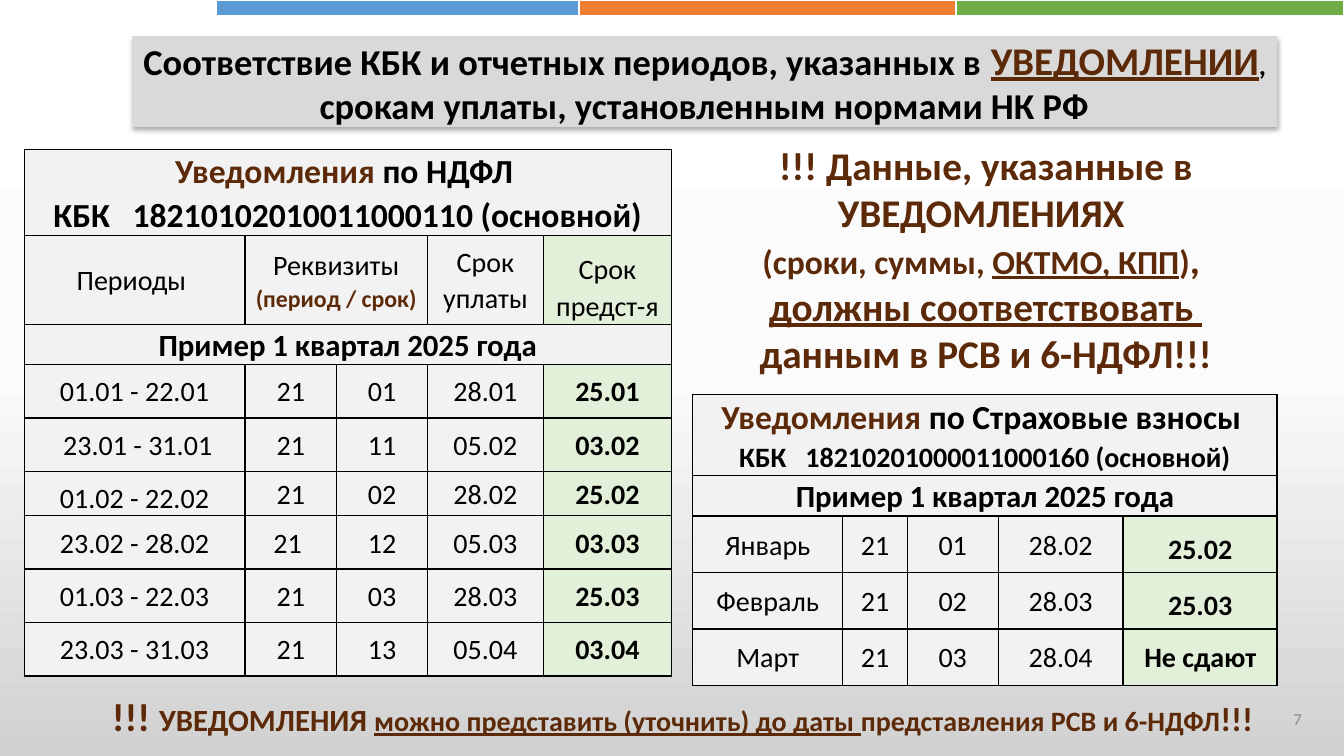
from copy import deepcopy
from dataclasses import dataclass

from pptx import Presentation
from pptx.dml.color import RGBColor
from pptx.enum.shapes import MSO_SHAPE as Shape
from pptx.enum.text import MSO_ANCHOR as Anchor, PP_ALIGN as Align
from pptx.oxml import parse_xml
from pptx.oxml.ns import nsdecls, qn
from pptx.util import Inches, Pt

COLORS = {
    "blue": "5B9BD5", "orange": "ED7D31", "green": "70AD47", "white": "FFFFFF",
    "black": "000000", "brown": "5C2A08", "number": "8C8C8C", "title": "D9D9D9",
    "cell": "F2F2F2", "due": "E2F0D9", "bg_mid": "FBFBFB", "bg_end": "D1D1D1",
}
FONT = "Calibri"


@dataclass
class Span:
    text: str
    size: float = 20
    color: str = "black"
    bold: bool = False
    underline: bool = False
    spacing: float = 0  # extra points after each character


@dataclass
class Cell:
    lines: list[list[Span]]
    columns: int = 1
    fill: str = "cell"
    anchor: Anchor = Anchor.MIDDLE
    top: float = 0
    left_rule: float = 1
    right_rule: float = 1


def rgb(name: str) -> RGBColor:
    return RGBColor.from_string(COLORS[name])


def write(frame, lines: list[list[Span]], align=Align.CENTER, line_spacing=None) -> None:
    frame.word_wrap = True
    for index, spans in enumerate(lines):
        paragraph = frame.add_paragraph() if index else frame.paragraphs[0]
        paragraph.alignment = align
        paragraph.line_spacing = line_spacing
        for span in spans:
            run = paragraph.add_run()
            run.text = span.text
            font = run.font
            font.name, font.size = FONT, Pt(span.size)
            font.bold, font.underline = span.bold, span.underline
            font.color.rgb = rgb(span.color)
            if span.spacing:
                run._r.get_or_add_rPr().set("spc", str(round(span.spacing * 100)))


def add_text(slide, left: float, top: float, width: float, height: float,
             lines: list[list[Span]], align=Align.CENTER, anchor=Anchor.TOP) -> None:
    frame = slide.shapes.add_textbox(*map(Inches, (left, top, width, height))).text_frame
    frame.vertical_anchor = anchor
    write(frame, lines, align)


def add_block(slide, left: float, top: float, width: float, height: float, fill: str):
    block = slide.shapes.add_shape(Shape.RECTANGLE, *map(Inches, (left, top, width, height)))
    block.shadow.inherit = False
    block.fill.solid()
    block.fill.fore_color.rgb = rgb(fill)
    return block


def draw_borders(cell, left: float, right: float) -> None:
    for side, width in (("L", left), ("R", right), ("T", 1), ("B", 1)):
        cell._tc.get_or_add_tcPr().append(parse_xml(
            f'<a:ln{side} {nsdecls("a")} w="{Pt(width)}"><a:solidFill>'
            f'<a:srgbClr val="{COLORS["black"]}"/></a:solidFill></a:ln{side}>'))


def add_schedule(slide, left: float, top: float, widths: list[float],
                 heights: list[float], rows: list[list[Cell]]) -> None:
    schedule = slide.shapes.add_table(
        len(heights), len(widths),
        *map(Inches, (left, top, sum(widths), sum(heights)))).table
    schedule.first_row = schedule.horz_banding = False
    for column, width in zip(schedule.columns, widths):
        column.width = Inches(width)
    for r, (height, entries) in enumerate(zip(heights, rows)):
        schedule.rows[r].height = Inches(height)
        c = 0
        for entry in entries:
            covered = [schedule.cell(r, c + i) for i in range(entry.columns)]
            for cell in covered:
                draw_borders(cell, entry.left_rule, entry.right_rule)
                cell.fill.solid()
                cell.fill.fore_color.rgb = rgb(entry.fill)
                cell.margin_left = cell.margin_right = Inches(0.07)
                cell.margin_top, cell.margin_bottom = Inches(entry.top), 0
                cell.vertical_anchor = entry.anchor
            if entry.columns > 1:
                covered[0].merge(covered[-1])
            write(covered[0].text_frame, entry.lines, line_spacing=1.07)
            c += entry.columns


def heading(subject: str, tail: float, code: str, code_size: float, rule: float) -> Cell:
    return Cell([
        [Span("Уведомления ", 24, "brown", True), Span(subject, 24, bold=True),
         Span(" ", 24, bold=True, spacing=tail)],
        [Span("КБК", code_size, bold=True),
         Span(" ", code_size, bold=True, spacing=code_size * 0.45),
         Span(f"{code} (основной)", code_size, bold=True)],
    ], columns=5, right_rule=rule)


def example() -> Cell:
    return Cell([[Span("Пример 1 квартал 2025 года", 22, bold=True)]], 5, right_rule=1.5)


def period_row(period: str, code: str, number: str, payment: str, due: str,
               anchor=Anchor.MIDDLE, due_top: float = 0) -> list[Cell]:
    return [
        Cell([[Span(period)]], anchor=anchor),
        Cell([[Span(code)]]),
        Cell([[Span(number)]]),
        Cell([[Span(payment)]], right_rule=1.5),
        Cell([[Span(due, bold=True)]], fill="due", top=due_top, left_rule=1.5, right_rule=1.5),
    ]


def paint_background(slide) -> None:
    fill = slide.background.fill
    fill.gradient()
    fill.gradient_angle = 270
    stop_list = slide._element.find(".//" + qn("a:gsLst"))
    stop_list.append(deepcopy(stop_list[0]))
    for stop, position, color in zip(fill.gradient_stops, (0, 0.5, 1),
                                     ("white", "bg_mid", "bg_end")):
        stop.position = position
        stop.color.rgb = rgb(color)


def main() -> None:
    deck = Presentation()
    deck.slide_width, deck.slide_height = Inches(13.33), Inches(7.5)
    slide = deck.slides.add_slide(deck.slide_layouts[6])
    paint_background(slide)

    # Top stripes
    for left, width, color in ((2.15, 3.59, "blue"), (5.75, 3.74, "orange"),
                               (9.48, 3.85, "green")):
        stripe = add_block(slide, left, 0, width, 0.16, color)
        stripe.line.color.rgb = rgb("white")
        stripe.line.width = Pt(1)

    # Slide number
    add_text(slide, 12.58, 6.93, 0.43, 0.4, [[Span("7", 12, "number")]],
             Align.RIGHT, Anchor.MIDDLE)

    # Title with a soft shadow
    title = add_block(slide, 1.31, 0.36, 11.36, 0.9, "title")
    title.line.fill.background()
    title._element.spPr.find(qn("a:effectLst")).append(parse_xml(
        f'<a:outerShdw {nsdecls("a")} blurRad="{Pt(3.5)}" dist="{Pt(2.2)}" dir="5400000" '
        f'rotWithShape="0"><a:srgbClr val="{COLORS["black"]}"><a:alpha val="32000"/>'
        '</a:srgbClr></a:outerShdw>'))
    title.text_frame.vertical_anchor = Anchor.MIDDLE
    write(title.text_frame, [
        [Span("Соответствие КБК и отчетных периодов, указанных в ", 26, bold=True),
         Span("УВЕДОМЛЕНИИ", 28, "brown", True, True), Span(", ", 20, bold=True)],
        [Span("срокам уплаты, установленным нормами НК РФ", 26, bold=True)],
    ])

    # Warning about matching data
    add_text(slide, 6.67, 1.35, 6.21, 2.46, [
        [Span("!!! Данные, указанные в УВЕДОМЛЕНИЯХ ", 28, "brown", True)],
        [Span("(сроки, суммы, ", 24, "brown", True),
         Span("ОКТМО, КПП", 24, "brown", True, True),
         Span(")", 24, "brown", True), Span(", ", 28, "brown", True)],
        [Span("должны соответствовать ", 28, "brown", True, True)],
        [Span("данным в РСВ и 6-НДФЛ!!!", 28, "brown", True)],
    ])

    # Income tax schedule
    add_schedule(
        slide, 0.24, 1.48, [2.19, 0.91, 0.9, 1.15, 1.27],
        [0.85, 0.88, 0.4, 0.53, 0.53, 0.44, 0.53, 0.53, 0.53],
        [
            [heading("по НДФЛ", 16.3, "18210102010011000110", 24, 1)],
            [Cell([[Span("Периоды ")]]),
             Cell([[Span("Реквизиты "), Span("(период / срок)", 17, "brown", True)]], 2),
             Cell([[Span("Срок уплаты")]]),
             Cell([[Span("Срок предст-я")]], fill="due", anchor=Anchor.BOTTOM)],
            [example()],
            period_row("01.01 - 22.01", "21", "01", "28.01", "25.01"),
            period_row(" 23.01 - 31.01", "21", "11", "05.02", "03.02"),
            period_row("01.02 - 22.02", "21", "02", "28.02", "25.02", Anchor.BOTTOM),
            period_row("23.02 - 28.02", "21 ", "12", "05.03", "03.03"),
            period_row("01.03 - 22.03", "21", "03", "28.03", "25.03"),
            period_row("23.03 - 31.03", "21", "13", "05.04", "03.04"),
        ])

    # Insurance contributions schedule
    add_schedule(
        slide, 6.87, 3.91, [1.49, 0.64, 0.9, 1.24, 1.53], [0.81, 0.4, 0.56, 0.56, 0.56],
        [
            [heading("по Страховые взносы", 10.8, "18210201000011000160", 20, 1.5)],
            [example()],
            period_row("Январь", "21", "01", "28.02", "25.02", due_top=0.08),
            period_row("Февраль", "21", "02", "28.03", "25.03", due_top=0.08),
            period_row("Март", "21", "03", "28.04", "Не сдают"),
        ])

    # Closing note
    add_text(slide, 0.29, 6.82, 12.96, 0.57, [[
        Span("!!! ", 28, "brown", True), Span("УВЕДОМЛЕНИЯ ", 22, "brown", True),
        Span("можно представить (уточнить) до даты ", 20, "brown", True, True),
        Span("представления РСВ и 6-НДФЛ", 20, "brown", True),
        Span("!!!", 24, "brown", True),
    ]])

    deck.save("out.pptx")


if __name__ == "__main__":
    main()
